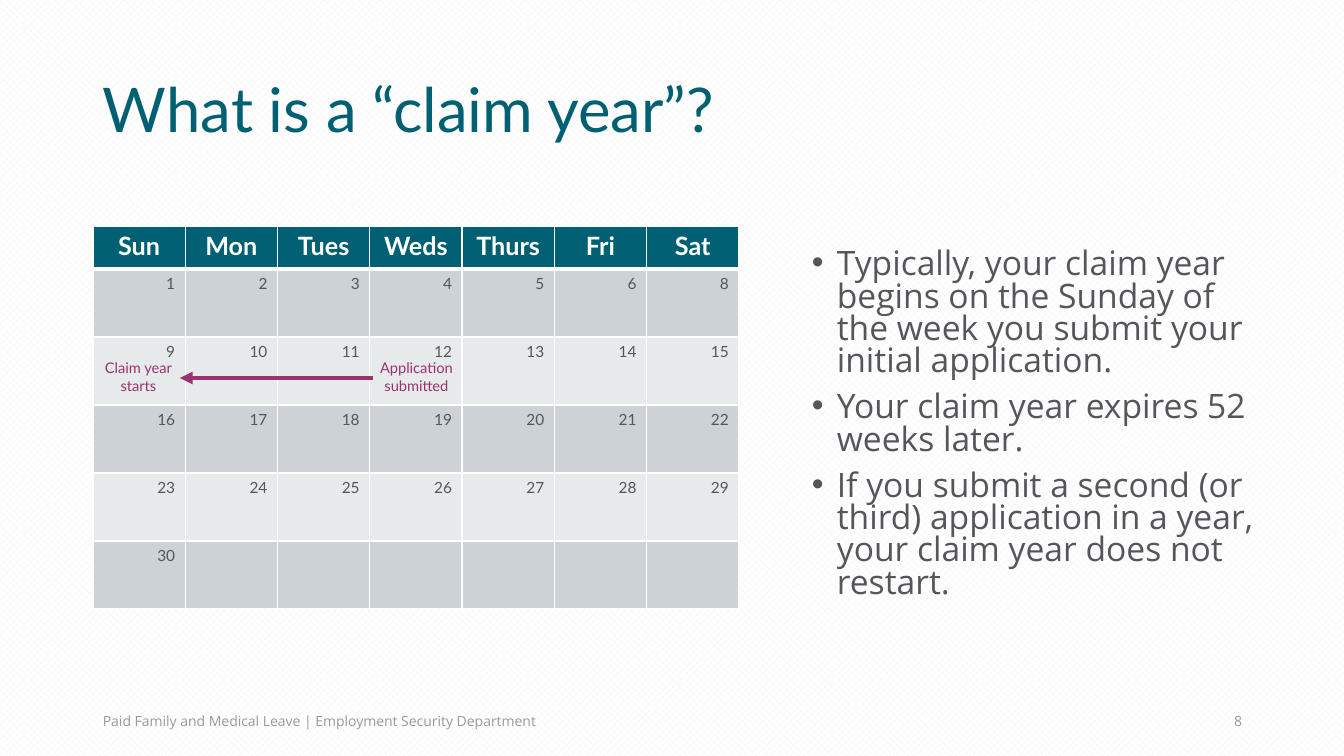
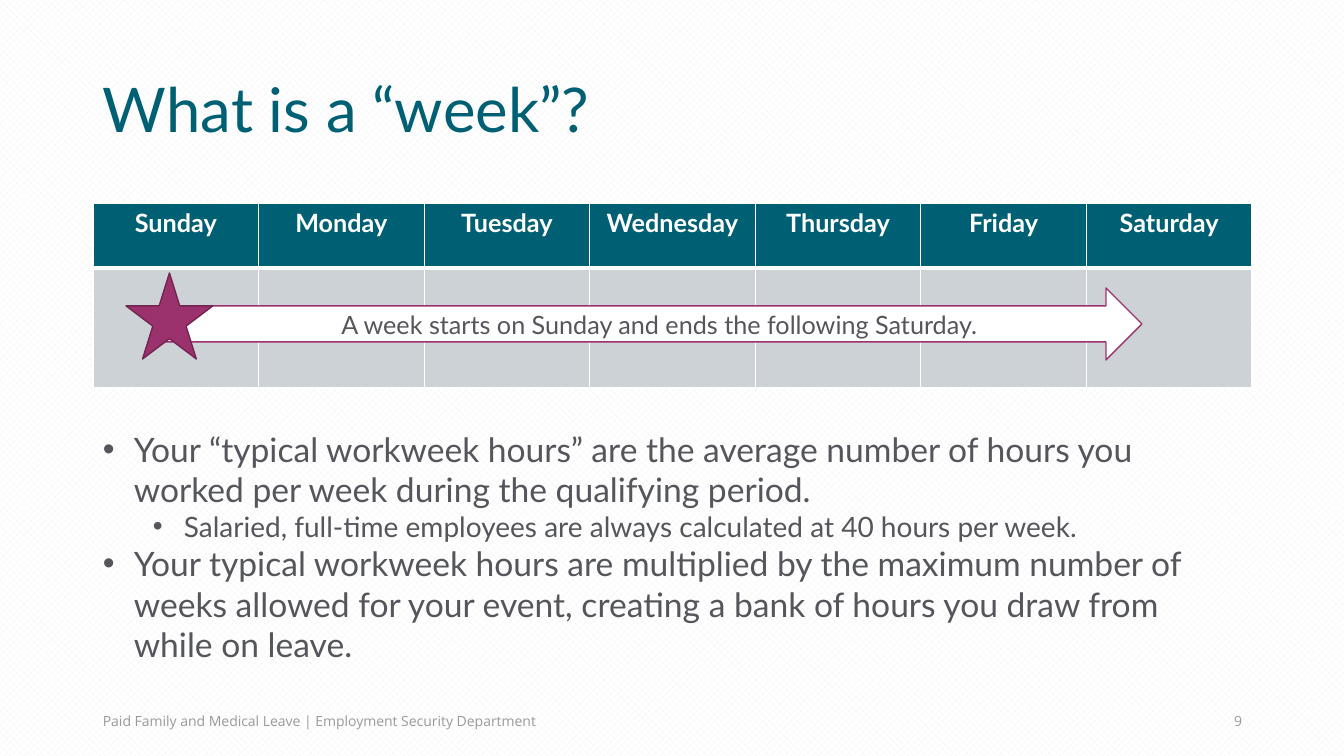
import pptx
import pptx.dml.color
import pptx.enum.dml
import pptx.enum.shapes
import pptx.enum.text
import pptx.oxml.ns
import pptx.util
import lxml.etree

WIDTH, HEIGHT = 1344, 756
SCALE = 12192000 / WIDTH
LEFT, CONTENT_WIDTH = 93, 1159

HEADING_FONT, BODY_FONT = "Lato", "Open Sans"
TEAL, PLUM, DARK_PLUM = "006073", "9B326E", "732551"
TEXT, FOOTER, DIVIDER = "54565B", "999A9B", "96999F"
WHITE, PATTERN = "FFFFFF", "F2F2F2"
BANDS = ["CCD2D5", "E7EAEB"]

ALIGN = pptx.enum.text.PP_ALIGN
ANCHOR = pptx.enum.text.MSO_ANCHOR
SHAPE = pptx.enum.shapes.MSO_SHAPE


def px(length):
    return pptx.util.Emu(round(length * SCALE))


def color(value):
    return pptx.dml.color.RGBColor.from_string(value)


def add_element(parent, tag, **attributes):
    return lxml.etree.SubElement(parent, pptx.oxml.ns.qn(tag), **attributes)


def write(para, text, size=18, font=HEADING_FONT, ink=TEXT, bold=False, align=ALIGN.LEFT,
          spacing=None, before=0, bullet_at=None, hang=0):
    para.alignment = align
    para.space_before = pptx.util.Pt(before)
    if spacing:
        para.line_spacing = spacing
    if bullet_at is not None:
        properties = para._p.get_or_add_pPr()
        properties.set("marL", str(px(bullet_at + hang)))
        properties.set("indent", str(-px(hang)))
        add_element(properties, "a:buFont", typeface="Arial")
        add_element(properties, "a:buChar", char="•")
    span = para.add_run()
    span.text = text
    span.font.size = pptx.util.Pt(size)
    span.font.name = font
    span.font.bold = bold
    span.font.color.rgb = color(ink)


def add_text(page, box, paragraphs, anchor=ANCHOR.TOP, **text_format):
    frame = page.shapes.add_textbox(*map(px, box)).text_frame
    frame.word_wrap = True
    frame.vertical_anchor = anchor
    for index, text in enumerate(paragraphs):
        para = frame.paragraphs[0] if index == 0 else frame.add_paragraph()
        write(para, text, **text_format)
    return frame


def add_figure(page, kind, box, fill, line):
    figure = page.shapes.add_shape(kind, *map(px, box))
    figure.shadow.inherit = False
    figure.fill.solid()
    figure.fill.fore_color.rgb = color(fill)
    figure.line.color.rgb = color(line)
    figure.line.width = pptx.util.Pt(1)


def add_arrow(page, start, end):
    arrow = page.shapes.add_connector(
        pptx.enum.shapes.MSO_CONNECTOR.STRAIGHT, *map(px, start + end))
    arrow.line.color.rgb = color(PLUM)
    arrow.line.width = pptx.util.Pt(3)
    add_element(arrow.line._get_or_add_ln(), "a:tailEnd", type="triangle")
    add_element(arrow._element.spPr, "a:effectLst")


def style_cell(cell, fill, **border_widths):
    properties = cell._tc.get_or_add_tcPr()
    for side in "LRTB":
        width = pptx.util.Pt(border_widths.get(side, 1))
        line = add_element(properties, f"a:ln{side}", w=str(width))
        add_element(add_element(line, "a:solidFill"), "a:srgbClr", val=WHITE)
    cell.fill.solid()
    cell.fill.fore_color.rgb = color(fill)


def add_calendar(page, box, days, weeks, header_height):
    left, top, width, height = box
    table = page.shapes.add_table(len(weeks) + 1, len(days), *map(px, box)).table
    for column in table.columns:
        column.width = px(width / len(days))
    for row in table.rows:
        row.height = px((height - header_height) / len(weeks))
    table.rows[0].height = px(header_height)
    for column, day in enumerate(days):
        cell = table.cell(0, column)
        style_cell(cell, TEAL, B=3)
        write(cell.text_frame.paragraphs[0], day, ink=WHITE, bold=True, align=ALIGN.CENTER)
        for row, week in enumerate(weeks, 1):
            cell = table.cell(row, column)
            style_cell(cell, BANDS[(row - 1) % 2], T=3 if row == 1 else 1)
            if column < len(week):
                write(cell.text_frame.paragraphs[0], str(week[column]), size=11,
                      align=ALIGN.RIGHT)


def add_page(deck, title, number):
    page = deck.slides.add_slide(deck.slide_layouts[6])
    add_text(page, (LEFT, 40, CONTENT_WIDTH, 146), [title], anchor=ANCHOR.MIDDLE,
             size=44, ink=TEAL, spacing=0.9)
    footer = {"size": 10, "font": BODY_FONT}
    frame = add_text(page, (LEFT, 701, 806, 40), ["Paid Family and Medical Leave "],
                     anchor=ANCHOR.MIDDLE, ink=FOOTER, **footer)
    write(frame.paragraphs[0], "|", ink=DIVIDER, **footer)
    write(frame.paragraphs[0], " Employment Security Department", ink=FOOTER, **footer)
    add_text(page, (LEFT + CONTENT_WIDTH - 302, 701, 302, 40), [str(number)],
             anchor=ANCHOR.MIDDLE, align=ALIGN.RIGHT, ink=FOOTER, **footer)
    return page


def add_claim_month(page, box):
    left, top, width, height = box
    dates = [*range(1, 7), *range(8, 31)]
    weeks = [dates[start:start + 7] for start in range(0, len(dates), 7)]
    add_calendar(page, box, ["Sun", "Mon", "Tues", "Weds", "Thurs", "Fri", "Sat"], weeks, 43)
    labels = [(267, ["Application", "submitted"]), (-11, ["Claim year", "starts"])]
    for offset, lines in labels:
        add_text(page, (left + offset, top + 128, 113, 45), lines, size=10.5, ink=PLUM,
                 align=ALIGN.CENTER)
    add_arrow(page, (left + 280, top + 152), (left + 87, top + 152))


def add_week_band(page, box):
    left, top, width, height = box
    days = ["Sunday", "Monday", "Tuesday", "Wednesday", "Thursday", "Friday", "Saturday"]
    add_calendar(page, box, days, [[]], 65)
    add_figure(page, SHAPE.RIGHT_ARROW, (left + 68, top + 85, 981, 72), WHITE, PLUM)
    add_text(page, (left + 197, top + 101, 739, 40),
             ["A week starts on Sunday and ends the following Saturday."], align=ALIGN.CENTER)
    add_figure(page, SHAPE.STAR_5_POINT, (left + 33, top + 70, 87, 86), PLUM, DARK_PLUM)


def add_claim_year_page(deck):
    page = add_page(deck, "What is a “claim year”?", 8)
    add_claim_month(page, (LEFT, 226, 646, 383))
    add_text(page, (802, 245, 471, 375), [
        "Typically, your claim year begins on the Sunday of the week you submit your "
        "initial application.",
        "Your claim year expires 52 weeks later.",
        "If you submit a second (or third) application in a year, your claim year does "
        "not restart.",
    ], size=24, font=BODY_FONT, spacing=0.8, before=10, bullet_at=0, hang=25)


def add_week_page(deck):
    page = add_page(deck, "What is a “week”?", 9)
    add_week_band(page, (LEFT, 203, CONTENT_WIDTH, 185))
    main_point = {"size": 24, "bullet_at": 0, "hang": 31}
    frame = add_text(page, (LEFT, 424, 1138, 260), [
        "Your “typical workweek hours” are the average number of hours you worked per "
        "week during the qualifying period.",
    ], **main_point)
    detail = frame.add_paragraph()
    detail.level = 1
    write(detail, "Salaried, full-time employees are always calculated at 40 hours per week.",
          size=20, bullet_at=50, hang=31)
    write(frame.add_paragraph(),
          "Your typical workweek hours are multiplied by the maximum number of weeks "
          "allowed for your event, creating a bank of hours you draw from while on leave.",
          **main_point)


def main():
    deck = pptx.Presentation()
    deck.slide_width, deck.slide_height = px(WIDTH), px(HEIGHT)
    backdrop = deck.slide_master.background.fill
    backdrop.patterned()
    backdrop.pattern = pptx.enum.dml.MSO_PATTERN.PERCENT_50
    backdrop.fore_color.rgb = color(PATTERN)
    backdrop.back_color.rgb = color(WHITE)
    add_claim_year_page(deck)
    add_week_page(deck)
    deck.save("out.pptx")


if __name__ == "__main__":
    main()
